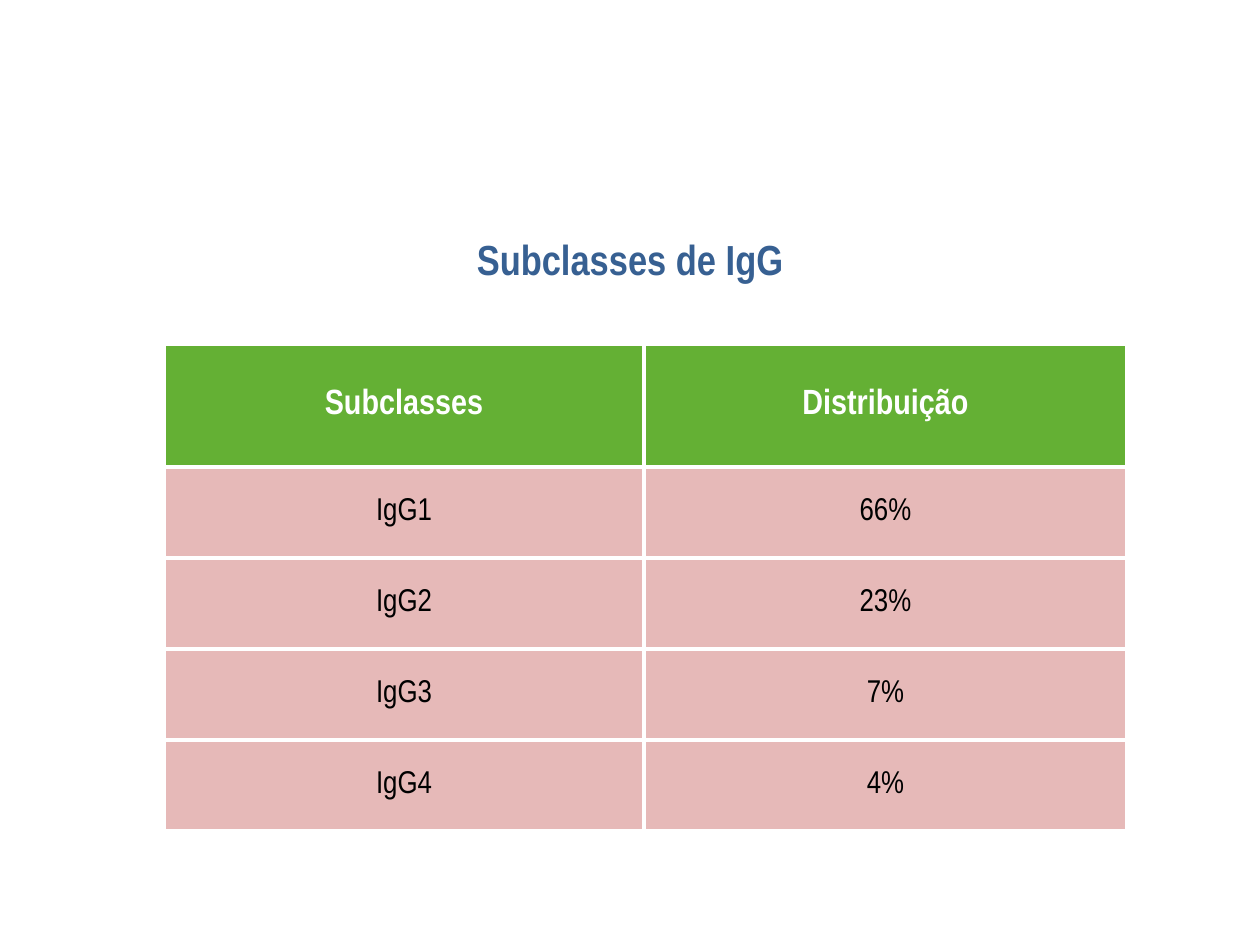
from dataclasses import dataclass

from lxml import etree
from pptx import Presentation
from pptx import util as u
from pptx.dml.color import RGBColor
from pptx.enum import text
from pptx.oxml import ns


@dataclass(frozen=True)
class Theme:
    font: str = "Arial Narrow"
    title: str = "376092"
    header_fill: str = "64B034"
    header_text: str = "FFFFFF"
    body_fill: str = "E6B9B8"
    body_text: str = "000000"
    border: str = "FFFFFF"
    border_width: float = 2.25
    title_size: int = 24
    header_size: int = 20
    body_size: int = 18


theme = Theme()


def px(length):
    return u.Emu(round(length * 914400 / 126))


def write(frame, words, size, color, bold):
    frame.vertical_anchor = text.MSO_ANCHOR.MIDDLE
    para = frame.paragraphs[0]
    para.text = words
    para.alignment = text.PP_ALIGN.CENTER
    para.font.name = theme.font
    para.font.size = u.Pt(size)
    para.font.bold = bold
    para.font.color.rgb = RGBColor.from_string(color)


deck = Presentation()
deck.slide_width, deck.slide_height = px(1260), px(945)
page = deck.slides.add_slide(deck.slide_layouts[6])

title = page.shapes.add_textbox(px(98), px(227), px(1064), px(64))
title.text_frame.word_wrap = True
write(title.text_frame, "Subclasses de IgG", theme.title_size, theme.title, True)

rows = [
    ("Subclasses", "Distribuição"),
    ("IgG1", "66%"),
    ("IgG2", "23%"),
    ("IgG3", "7%"),
    ("IgG4", "4%"),
]
column_widths = [480, 483]
row_heights = [123] + [91] * 4

table = page.shapes.add_table(
    len(rows), len(column_widths), px(164), px(344),
    px(sum(column_widths)), px(sum(row_heights)),
).table
for column, width in zip(table.columns, column_widths):
    column.width = px(width)
for row, height in zip(table.rows, row_heights):
    row.height = px(height)

for r, values in enumerate(rows):
    if r == 0:
        fill, size, color = theme.header_fill, theme.header_size, theme.header_text
    else:
        fill, size, color = theme.body_fill, theme.body_size, theme.body_text
    for c, value in enumerate(values):
        cell = table.cell(r, c)
        write(cell.text_frame, value, size, color, r == 0)
        cell.vertical_anchor = text.MSO_ANCHOR.MIDDLE
        properties = cell._tc.get_or_add_tcPr()
        for side in ("lnL", "lnR", "lnT", "lnB"):
            line = etree.SubElement(properties, ns.qn(f"a:{side}"), w=str(u.Pt(theme.border_width)))
            solid = etree.SubElement(line, ns.qn("a:solidFill"))
            etree.SubElement(solid, ns.qn("a:srgbClr"), val=theme.border)
        cell.fill.solid()
        cell.fill.fore_color.rgb = RGBColor.from_string(fill)

deck.save("out.pptx")
